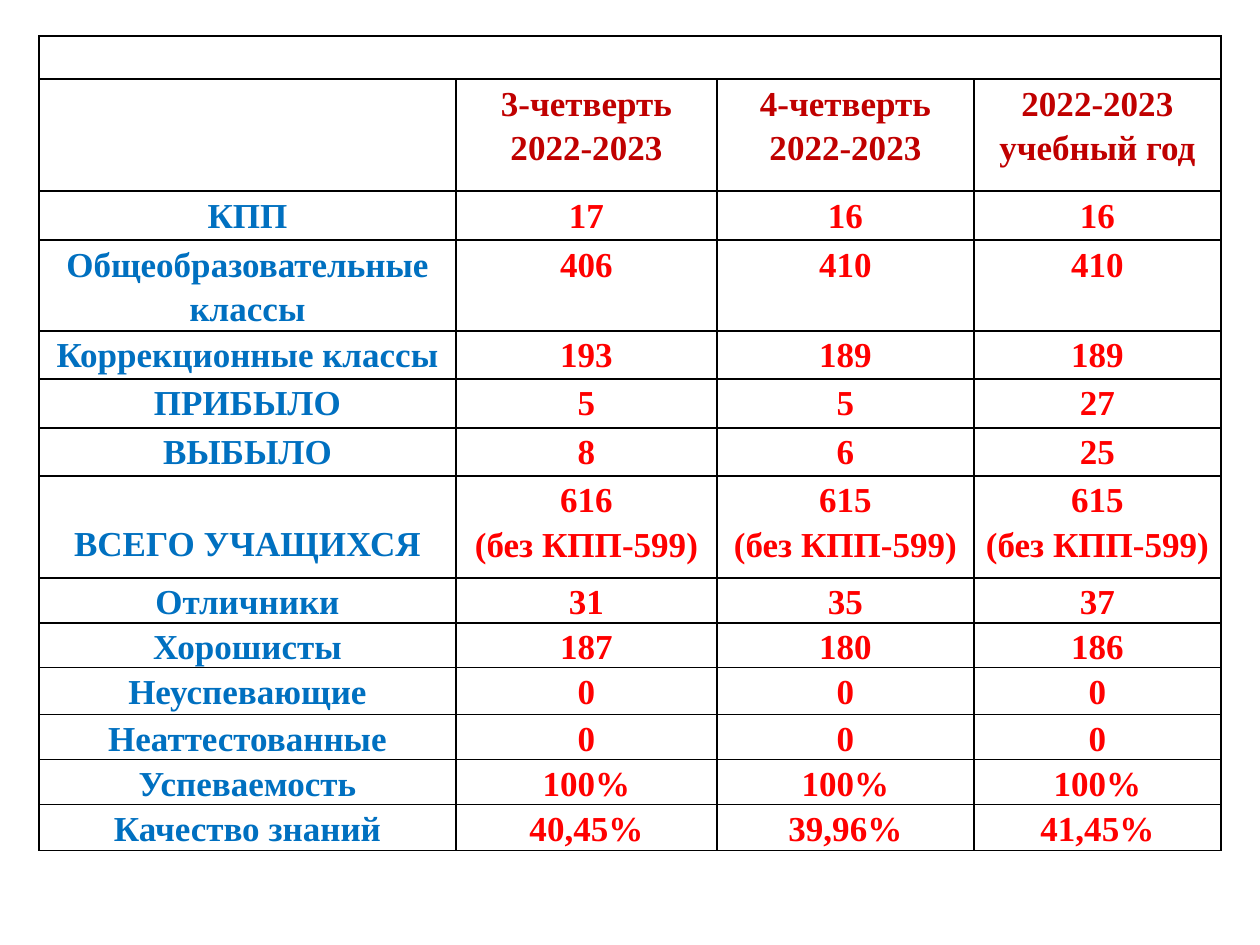
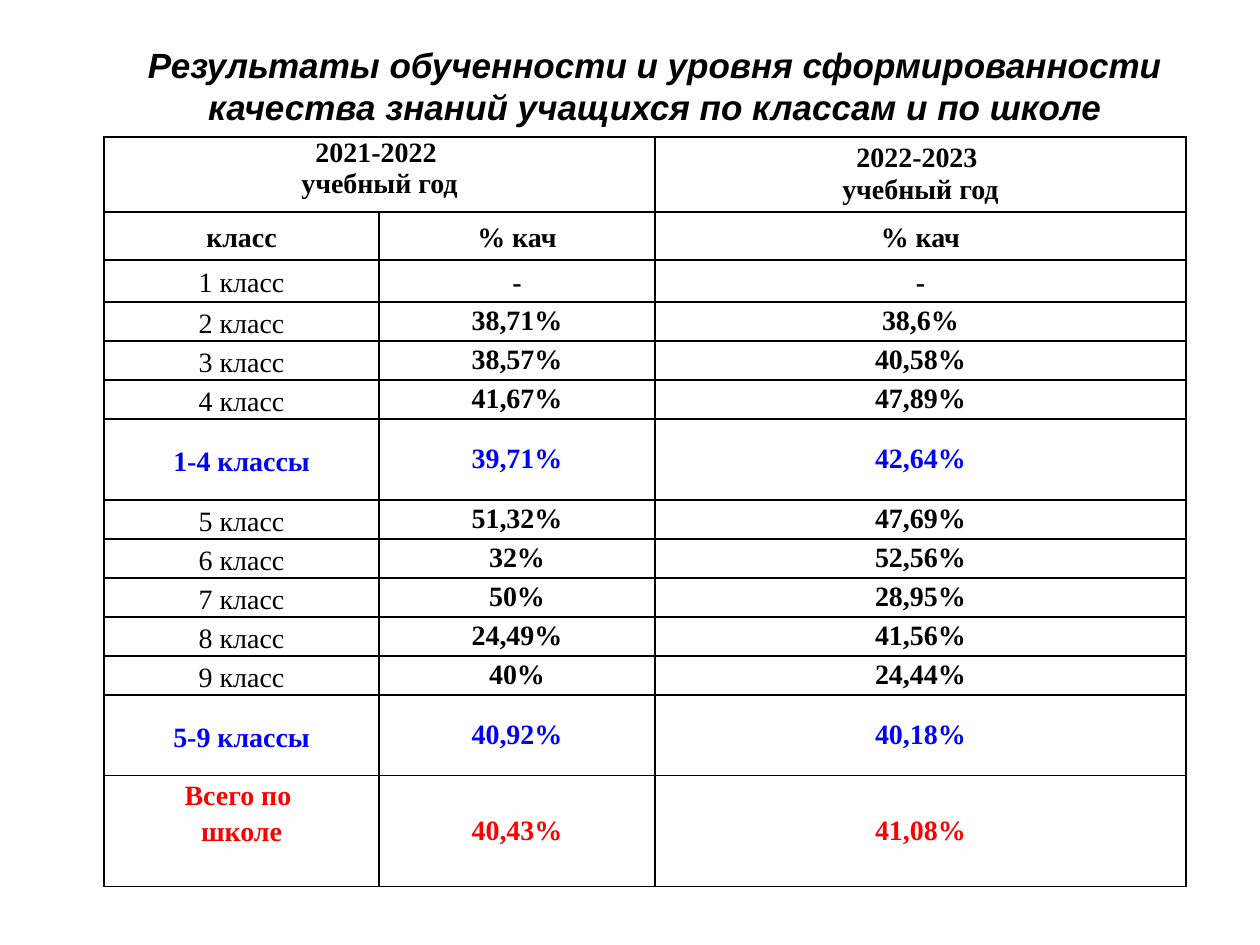
"""Builds two slides with tables of school results."""
from dataclasses import dataclass

from lxml.etree import SubElement
from pptx import Presentation
from pptx.dml.color import RGBColor
from pptx.enum.text import MSO_ANCHOR, PP_ALIGN
from pptx.oxml.ns import qn
from pptx.util import Emu, Pt


@dataclass(frozen=True)
class Theme:
    """Colours, fonts and type sizes of the deck."""
    black: str = "000000"
    heading: str = "C00000"
    label: str = "0070C0"
    value: str = "FF0000"
    subtotal: str = "0000FF"
    serif: str = "Times New Roman"
    sans: str = "Arial"
    large: int = 20
    medium: int = 16
    rule: int = 1
    spacing: float = 1.15


THEME = Theme()
BORDERS = ("a:lnL", "a:lnR", "a:lnT", "a:lnB")


def px(count):
    """Turn a length in pixels into EMU."""
    return Emu(round(count * 914400 / 126))


class Deck:
    """Holds the theme, the presentation and the current page."""

    def __init__(self, theme):
        """Start an empty deck."""
        self.theme = theme
        self.deck = Presentation()
        self.deck.slide_width, self.deck.slide_height = px(1260), px(945)
        self.page = None

    def add_page(self):
        """Add a blank page and make it current."""
        self.page = self.deck.slides.add_slide(self.deck.slide_layouts[6])

    def add_lines(self, frame, text, color, spacing=None, **font):
        """Put centred lines of text into a frame."""
        for index, line in enumerate(text.split("\n")):
            para = frame.add_paragraph() if index else frame.paragraphs[0]
            para.alignment = PP_ALIGN.CENTER
            if spacing:
                para.line_spacing = spacing
            span = para.add_run()
            span.text = line
            for name, setting in font.items():
                setattr(span.font, name, setting)
            span.font.color.rgb = RGBColor.from_string(color)

    def title(self, text, left, top, width, height):
        """Add an italic title."""
        box = self.page.shapes.add_textbox(px(left), px(top), px(width), px(height))
        box.text_frame.word_wrap = True
        self.add_lines(box.text_frame, text, self.theme.black, name=self.theme.sans,
                       size=Pt(self.theme.large), bold=True, italic=True)

    def table(self, left, top, widths, heights):
        """Add a plain ruled table and return it."""
        table = self.page.shapes.add_table(
            len(heights), len(widths), px(left), px(top),
            px(sum(widths)), px(sum(heights))).table
        table.first_row = table.horz_banding = False
        for column, width in zip(table.columns, widths):
            column.width = px(width)
        for row, height in zip(table.rows, heights):
            row.height = px(height)
        for cell in table.iter_cells():
            self.rule(cell)
        return table

    def rule(self, cell):
        """Give a cell thin borders, no fill and tight margins."""
        properties = cell._tc.get_or_add_tcPr()
        for border in BORDERS:
            line = SubElement(properties, qn(border), w=str(Pt(self.theme.rule)))
            fill = SubElement(line, qn("a:solidFill"))
            SubElement(fill, qn("a:srgbClr"), val=self.theme.black)
        cell.fill.background()
        self.format_cell(cell, margin_left=px(9), margin_right=px(9),
                         margin_top=0, margin_bottom=0)

    def format_cell(self, cell, **settings):
        """Set cell attributes from format values."""
        for name, setting in settings.items():
            setattr(cell, name, setting)

    def fill_cell(self, cell, text, color, size, bold=True, spacing=None):
        """Put serif text into a table cell."""
        if text:
            self.add_lines(cell.text_frame, text, color, spacing,
                           name=self.theme.serif, size=Pt(size), bold=bold)


QUARTERS = [
    ("", "3-четверть 2022-2023", "4-четверть 2022-2023", "2022-2023 учебный год"),
    ("КПП", "17", "16", "16"),
    ("Общеобразовательные классы", "406", "410", "410"),
    ("Коррекционные классы", "193", "189", "189"),
    ("ПРИБЫЛО", "5", "5", "27"),
    ("ВЫБЫЛО", "8", "6", "25"),
    ("ВСЕГО УЧАЩИХСЯ", *(f"{count}\n(без КПП-599)" for count in (616, 615, 615))),
    ("Отличники", "31", "35", "37"),
    ("Хорошисты", "187", "180", "186"),
    ("Неуспевающие", "0", "0", "0"),
    ("Неаттестованные", "0", "0", "0"),
    ("Успеваемость", "100%", "100%", "100%"),
    ("Качество знаний", "40,45%", "39,96%", "41,45%"),
]
QUARTER_HEIGHTS = [43, 112, 49, 91, 48, 49, 48, 102, 45, 44, 47, 45, 45, 46]

CLASSES = [
    ("2021-2022 \nучебный год", "", "2022-2023 \nучебный год"),
    ("класс", "% кач", "% кач"),
    ("1 класс", "-", "-"),
    ("2 класс", "38,71%", "38,6%"),
    ("3 класс", "38,57%", "40,58%"),
    ("4 класс", "41,67%", "47,89%"),
    ("1-4 классы", "39,71%", "42,64%"),
    ("5 класс", "51,32%", "47,69%"),
    ("6 класс", "32%", "52,56%"),
    ("7 класс", "50%", "28,95%"),
    ("8 класс", "24,49%", "41,56%"),
    ("9 класс", "40%", "24,44%"),
    ("5-9 классы", "40,92%", "40,18%"),
    ("Всего по \nшколе", "40,43%", "41,08%"),
]
CLASS_HEIGHTS = [75, 48, 42] + [39] * 3 + [81] + [39] * 5 + [81, 111]


def build_quarters(deck):
    """Build the page that compares quarters and the year."""
    theme = deck.theme
    deck.add_page()
    table = deck.table(39, 36, [417, 261, 257, 247], QUARTER_HEIGHTS)
    table.cell(0, 0).merge(table.cell(0, 3))
    for row, texts in enumerate(QUARTERS, 1):
        for column, text in enumerate(texts):
            color = (theme.heading if row == 1 else
                     theme.value if column else theme.label)
            deck.fill_cell(table.cell(row, column), text, color, theme.large,
                           spacing=theme.spacing)
    deck.format_cell(table.cell(7, 0), margin_top=px(44))


def build_classes(deck):
    """Build the page that compares classes over two years."""
    theme = deck.theme
    deck.add_page()
    table = deck.table(104, 137, [275, 276, 531], CLASS_HEIGHTS)
    table.cell(0, 0).merge(table.cell(0, 1))
    last = len(CLASSES) - 1
    colors = {6: theme.subtotal, 12: theme.subtotal, last: theme.value}
    for row, texts in enumerate(CLASSES):
        for column, text in enumerate(texts):
            cell = table.cell(row, column)
            label = column == 0
            spaced = row in (1, 2) or (label and row > 0)
            deck.fill_cell(cell, text, colors.get(row, theme.black), theme.medium,
                           bold=not label or row < 2 or row in colors,
                           spacing=theme.spacing if spaced else None)
            if row and not (label and row == last):
                deck.format_cell(cell, vertical_anchor=MSO_ANCHOR.MIDDLE)
    deck.format_cell(table.cell(0, 2), margin_top=px(6), margin_bottom=px(4))
    deck.title("Результаты обученности и уровня сформированности "
               "качества знаний учащихся по классам и по школе", 84, 37, 1142, 97)


def main():
    """Build and save the deck."""
    deck = Deck(THEME)
    build_quarters(deck)
    build_classes(deck)
    deck.deck.save("out.pptx")


if __name__ == "__main__":
    main()
